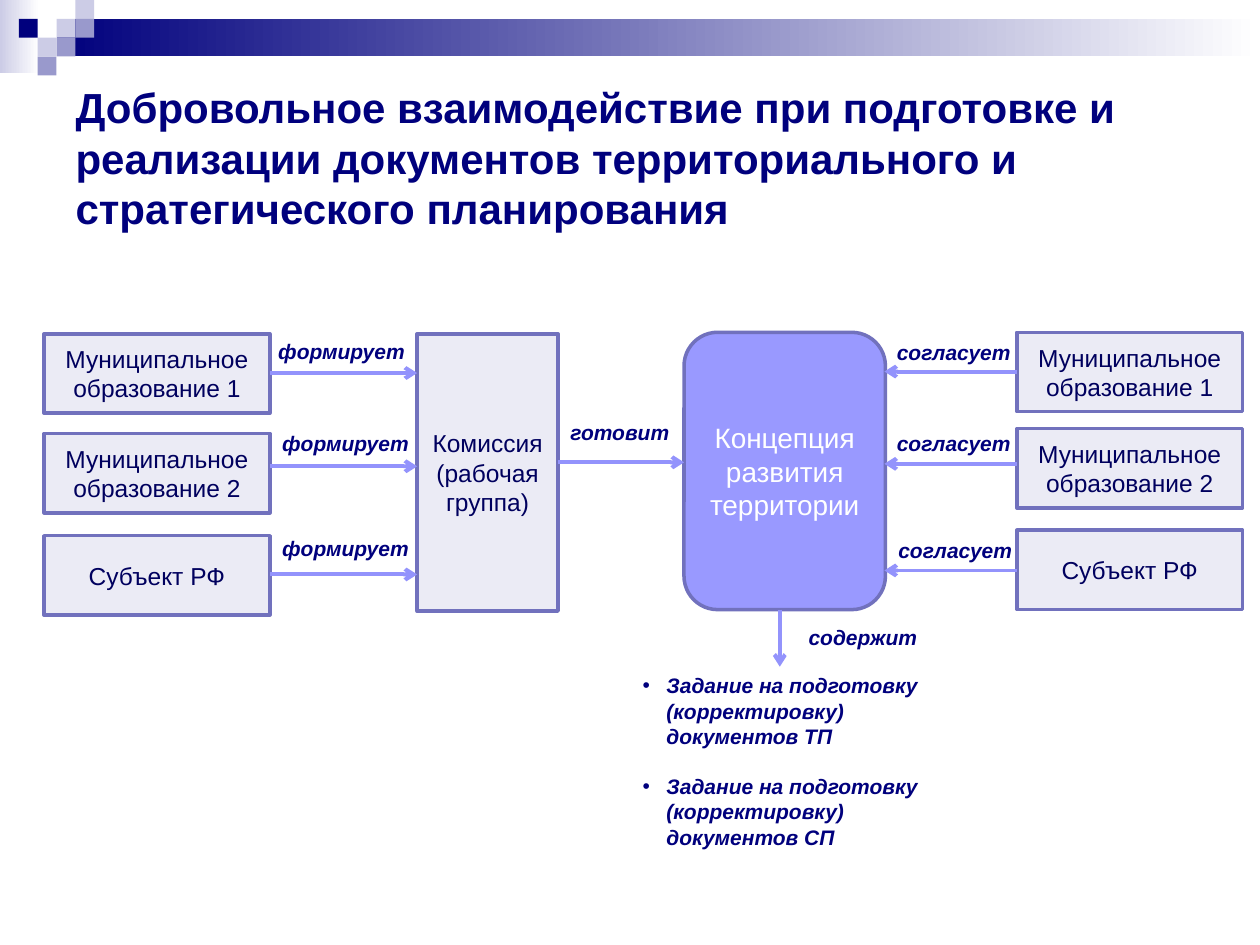
from pptx import Presentation
from pptx import util as u
from pptx.dml.color import RGBColor
from pptx.enum import shapes, text
from pptx.oxml import ns, xmlchemy
from lxml import etree

THEME = {
    "font": "Arial",
    "navy": "00007D", "ink": "00005E", "white": "FFFFFF",
    "pale": "EBEBF5", "edge": "7171BD", "violet": "9999FF", "arrow": "9393FC",
    "lilac": "CCCCE6", "dusk": "9999CC",
    "title": 24, "concept": 16, "node": 14, "label": 12,
}

# Content; every length is in centimetres
TITLE = ("Добровольное взаимодействие при подготовке и реализации "
         "документов территориального и стратегического планирования")
TASKS = ["Задание на подготовку (корректировку) документов ТП",
         "Задание на подготовку (корректировку) документов СП"]
PARTIES = ["Муниципальное образование 1", "Муниципальное образование 2", "Субъект РФ"]
PARTY_SIZE = (4.55, 1.6)
SIDES = [
    {"left": 0.89, "tops": (6.73, 8.74, 10.8), "verb": "формирует",
     "labels": ((5.36, 6.7), (5.44, 8.56), (5.44, 10.67)), "label_width": 3.1,
     "arrow": (5.44, 8.41), "arrow_y": (7.52, 9.4, 11.58)},
    {"left": 20.5, "tops": (6.7, 8.64, 10.69), "verb": "согласует",
     "labels": ((17.83, 6.73), (17.83, 8.56), (17.86, 10.72)), "label_width": 2.82,
     "arrow": (20.5, 17.83), "arrow_y": (7.49, 9.35, 11.5)},
]
COMMISSION = ("Комиссия (рабочая группа)", (8.41, 6.73, 2.84, 5.59))
CONCEPT = ("Концепция развития территории", (13.79, 6.7, 4.06, 5.59))
STEPS = [("готовит", (11.25, 8.33, 2.51), (11.25, 9.32, 13.79, 9.32)),
         ("содержит", (16.05, 12.47, 2.72), (15.72, 12.29, 15.72, 13.44))]

# Corner mosaic: column, row, colour on a square grid
TILE, MOSAIC_LEFT = 0.38, 0.38
MOSAIC = [(1, 1, "lilac"), (2, 0, "lilac"), (2, 1, "dusk"), (0, 2, "lilac"),
          (-1, 1, "navy"), (1, 2, "dusk"), (0, 3, "dusk")]
BANDS = [("lilac", (0, 0, 0.79, 1.47)), ("navy", (1.14, 0.38, 24.26, 0.76))]


def color(name):
    return RGBColor.from_string(THEME[name])


def style(para, size, ink, bold=False, italic=False, align=text.PP_ALIGN.LEFT):
    para.alignment = align
    font = para.font
    font.name, font.size = THEME["font"], u.Pt(THEME[size])
    font.bold, font.italic = bold, italic
    font.color.rgb = color(ink)


def place(shape, *area):
    shape.left, shape.top, shape.width, shape.height = map(u.Cm, area)


def add_box(page, area, fill=None, kind=shapes.MSO_SHAPE.RECTANGLE):
    box = page.shapes.add_shape(kind, *map(u.Cm, area))
    box.shadow.inherit = False
    box.line.fill.background()
    if fill:
        box.fill.solid()
        box.fill.fore_color.rgb = color(fill)
    return box


def add_node(page, words, area, fill="pale", ink="ink", size="node",
             kind=shapes.MSO_SHAPE.RECTANGLE):
    box = add_box(page, area, fill, kind)
    box.line.color.rgb = color("edge")
    box.line.width = u.Pt(2)
    frame = box.text_frame
    frame.word_wrap = True
    frame.vertical_anchor = text.MSO_ANCHOR.MIDDLE
    frame.text = words
    style(frame.paragraphs[0], size, ink, align=text.PP_ALIGN.CENTER)


def add_label(page, words, left, top, width):
    box = page.shapes.add_textbox(*map(u.Cm, (left, top, width, 0.77)))
    frame = box.text_frame
    frame.word_wrap = False
    frame.auto_size = text.MSO_AUTO_SIZE.SHAPE_TO_FIT_TEXT
    frame.text = words
    style(frame.paragraphs[0], "label", "navy", bold=True, italic=True)


def add_arrow(page, *ends):
    arrow = page.shapes.add_connector(shapes.MSO_CONNECTOR.STRAIGHT, *map(u.Cm, ends))
    arrow.line.color.rgb = color("arrow")
    arrow.line.width = u.Pt(2.25)
    etree.SubElement(arrow.line._get_or_add_ln(), ns.qn("a:tailEnd"), type="arrow")
    etree.SubElement(arrow._element.spPr, ns.qn("a:effectLst"))


def add_decoration(page):
    for start, area in BANDS:
        band = add_box(page, area)
        band.fill.gradient()
        band.fill.gradient_angle = 0
        for stop, name, position in zip(band.fill.gradient_stops, (start, "white"), (0, 1)):
            stop.color.rgb = color(name)
            stop.position = position
    for column, row, name in MOSAIC:
        add_box(page, (MOSAIC_LEFT + (column + 1) * TILE, row * TILE, TILE, TILE), name)


def fill_title(title):
    place(title, 1.27, 1.27, 22.86, 3.81)
    title.text_frame.text = TITLE
    title.text_frame.vertical_anchor = text.MSO_ANCHOR.MIDDLE
    style(title.text_frame.paragraphs[0], "title", "navy", bold=True)


def fill_tasks(body):
    place(body, 12.7, 13.44, 6.99, 3.84)
    frame = body.text_frame
    frame.text = "\n".join(TASKS)
    frame.auto_size = text.MSO_AUTO_SIZE.NONE
    for number, para in enumerate(frame.paragraphs):
        style(para, "label", "navy", bold=True, italic=True)
        para.space_before = u.Pt(14.4 if number else 0)
        props = para._p.get_or_add_pPr()
        props.set("marL", str(u.Cm(0.48)))
        props.set("indent", str(-u.Cm(0.48)))
        bullet = etree.Element(ns.qn("a:buChar"), char="•")
        props.find(ns.qn("a:defRPr")).addprevious(bullet)


def main():
    deck = Presentation()
    deck.slide_width, deck.slide_height = u.Cm(25.4), u.Cm(19.05)
    page = deck.slides.add_slide(deck.slide_layouts[1])
    add_decoration(page)
    fill_title(page.shapes.title)
    fill_tasks(page.placeholders[1])

    # Central nodes
    add_node(page, *COMMISSION)
    add_node(page, *CONCEPT, fill="violet", ink="white", size="concept",
             kind=shapes.MSO_SHAPE.ROUNDED_RECTANGLE)

    # Parties on both sides, each with its arrow and verb
    for side in SIDES:
        start, end = side["arrow"]
        rows = zip(PARTIES, side["tops"], side["arrow_y"], side["labels"])
        for party, top, y, corner in rows:
            add_node(page, party, (side["left"], top, *PARTY_SIZE))
            add_arrow(page, start, y, end, y)
            add_label(page, side["verb"], *corner, side["label_width"])

    # Steps from commission to concept and on to the tasks
    for verb, spot, ends in STEPS:
        add_arrow(page, *ends)
        add_label(page, verb, *spot)

    deck.save("out.pptx")


if __name__ == "__main__":
    main()
